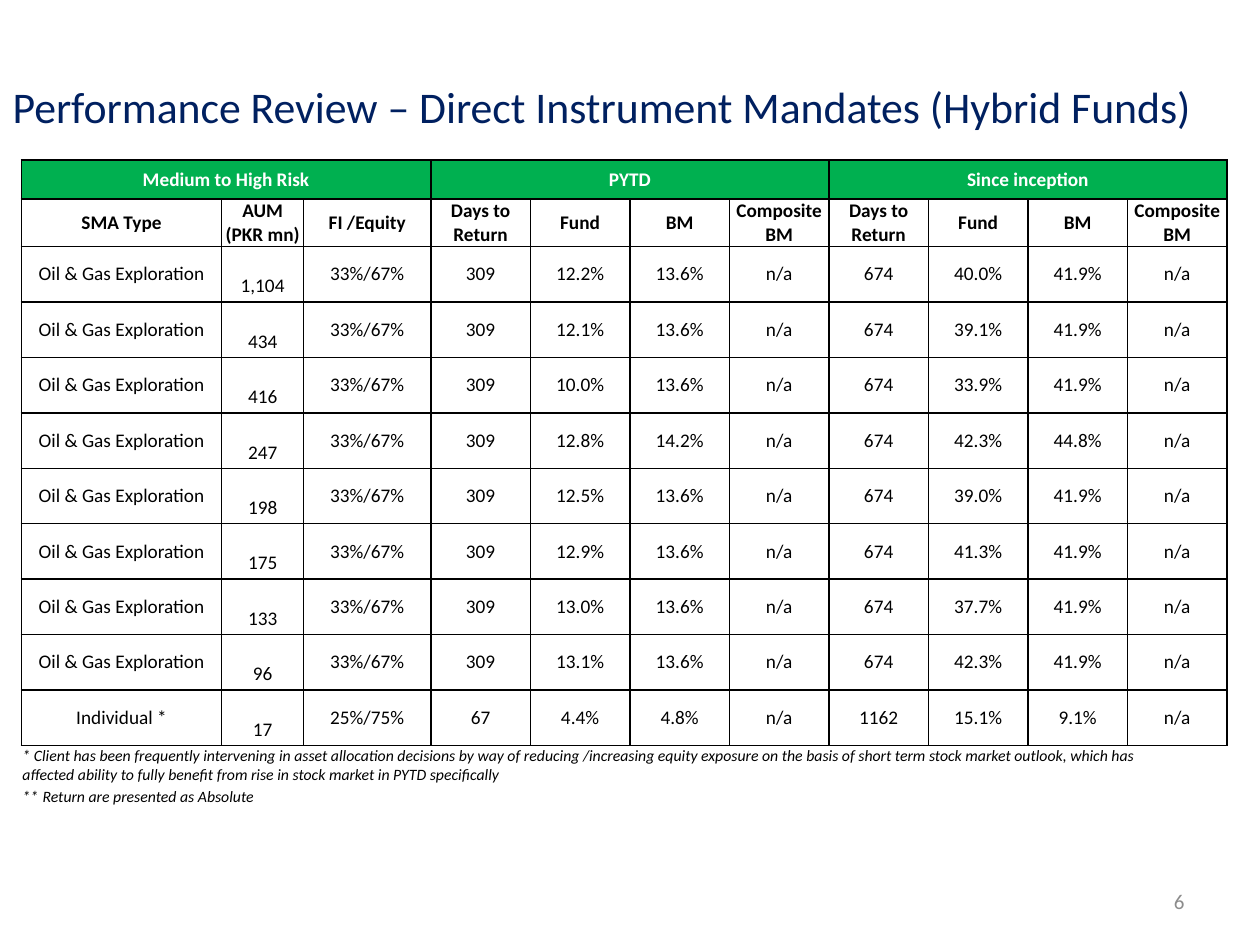
from dataclasses import dataclass

from lxml import etree
from pptx import Presentation
from pptx.dml.color import RGBColor
from pptx.enum.text import MSO_ANCHOR, MSO_AUTO_SIZE, PP_ALIGN
from pptx.oxml.ns import qn
from pptx.util import Inches, Pt

LEFT, CENTER, RIGHT = PP_ALIGN.LEFT, PP_ALIGN.CENTER, PP_ALIGN.RIGHT
TOP, MIDDLE = MSO_ANCHOR.TOP, MSO_ANCHOR.MIDDLE
NO_FIT = MSO_AUTO_SIZE.NONE

COLORS = {
    "navy": "002060",
    "green": "00B050",
    "white": "FFFFFF",
    "black": "000000",
    "gray": "8C8C8C",
}
WIDTHS = [1.59, 0.65, 1.01] + [0.79] * 8
HEIGHTS = [0.31, 0.35] + [0.44] * 9
AUM_COL = 1
AUM_DROP = 0.19


@dataclass
class Band:
    text: str
    start: int
    span: int


@dataclass
class Fund:
    aum: str
    year: tuple[str, str]
    total: tuple[str, str]
    kind: str = "Oil & Gas Exploration"
    mix: str = "33%/67%"
    days: tuple[str, str] = ("309", "674")

    def cells(self) -> list[str]:
        return [self.kind, self.aum, self.mix,
                self.days[0], *self.year, "n/a",
                self.days[1], *self.total, "n/a"]


BANDS = [
    Band("Medium to High Risk", 0, 3),
    Band("PYTD", 3, 4),
    Band("Since inception", 7, 4),
]
HEADS = ["SMA Type", "AUM (PKR mn)", "FI /Equity"]
HEADS += ["Days to Return", "Fund", "BM", "Composite BM"] * 2
FUNDS = [
    Fund("1,104", ("12.2%", "13.6%"), ("40.0%", "41.9%")),
    Fund("434", ("12.1%", "13.6%"), ("39.1%", "41.9%")),
    Fund("416", ("10.0%", "13.6%"), ("33.9%", "41.9%")),
    Fund("247", ("12.8%", "14.2%"), ("42.3%", "44.8%")),
    Fund("198", ("12.5%", "13.6%"), ("39.0%", "41.9%")),
    Fund("175", ("12.9%", "13.6%"), ("41.3%", "41.9%")),
    Fund("133", ("13.0%", "13.6%"), ("37.7%", "41.9%")),
    Fund("96", ("13.1%", "13.6%"), ("42.3%", "41.9%")),
    Fund("17", ("4.4%", "4.8%"), ("15.1%", "9.1%"),
         "Individual *", "25%/75%", ("67", "1162")),
]
NOTES = [
    [("* Client has been frequently intervening in asset allocation decisions "
      "by way of reducing /increasing equity exposure on the basis of short "
      "term stock market outlook, which has affected ability to fully benefit "
      "from rise in stock market in PYTD specifically", 9)],
    [("**", 9), (" ", 11), ("Return are presented as Absolute", 9)],
]


def style(font, size: float, color: str, **extra) -> None:
    values = {"name": "Calibri", "size": Pt(size), **extra}
    for key, value in values.items():
        setattr(font, key, value)
    font.color.rgb = RGBColor.from_string(COLORS[color])


def setup(shape, box: tuple, anchor) -> None:
    for key, value in zip(("left", "top", "width", "height"), box):
        setattr(shape, key, Inches(value))
    frame = shape.text_frame
    values = {"word_wrap": True, "auto_size": NO_FIT, "vertical_anchor": anchor}
    for key, value in values.items():
        setattr(frame, key, value)


def add_line(slide, shape, box: tuple, text: str, size: float, color: str, align) -> None:
    setup(shape, box, MIDDLE)
    para = shape.text_frame.paragraphs[0]
    para.alignment = align
    run = para.add_run()
    run.text = text
    style(run.font, size, color)


def add_notes(slide, box: tuple) -> None:
    shape = slide.shapes.add_textbox(0, 0, 0, 0)
    setup(shape, box, TOP)
    frame = shape.text_frame
    for num, parts in enumerate(NOTES):
        para = frame.add_paragraph() if num else frame.paragraphs[0]
        para.alignment = LEFT
        for text, size in parts:
            run = para.add_run()
            run.text = text
            style(run.font, size, "black", italic=True)


def format_cell(cell, fill: str) -> None:
    props = cell._tc.get_or_add_tcPr()
    for side in ("lnL", "lnR", "lnT", "lnB"):
        line = etree.SubElement(props, qn("a:" + side), w=str(Pt(1)))
        solid = etree.SubElement(line, qn("a:solidFill"))
        etree.SubElement(solid, qn("a:srgbClr"), val=COLORS["black"])
    cell.fill.solid()
    cell.fill.fore_color.rgb = RGBColor.from_string(COLORS[fill])
    for side in ("left", "right", "top", "bottom"):
        setattr(cell, "margin_" + side, 0)
    cell.vertical_anchor = MIDDLE


def write_cell(cell, text: str, color: str, bold: bool) -> None:
    para = cell.text_frame.paragraphs[0]
    para.alignment = CENTER
    run = para.add_run()
    run.text = text
    style(run.font, 11, color, bold=bold)


def add_grid(slide, left: float, top: float) -> None:
    frame = slide.shapes.add_table(
        len(HEIGHTS), len(WIDTHS), Inches(left), Inches(top),
        Inches(sum(WIDTHS)), Inches(sum(HEIGHTS)))
    table = frame.table
    table.horz_banding = False
    for col, width in zip(table.columns, WIDTHS):
        col.width = Inches(width)
    for num, (row, height) in enumerate(zip(table.rows, HEIGHTS)):
        row.height = Inches(height)
        for cell in row.cells:
            format_cell(cell, "white" if num else "green")
    for band in BANDS:
        cell = table.cell(0, band.start)
        cell.merge(table.cell(0, band.start + band.span - 1))
        write_cell(cell, band.text, "white", True)
    lines = [HEADS] + [fund.cells() for fund in FUNDS]
    for num, line in enumerate(lines, 1):
        for col, text in enumerate(line):
            write_cell(table.cell(num, col), text, "black", num == 1)
        if num > 1:
            table.cell(num, AUM_COL).margin_top = Inches(AUM_DROP)


def main() -> None:
    deck = Presentation()
    deck.slide_width, deck.slide_height = Inches(10), Inches(7.5)
    slide = deck.slides.add_slide(deck.slide_layouts[5])
    add_line(slide, slide.shapes.title, (0, 0.54, 10, 0.6),
             "Performance Review – Direct Instrument Mandates (Hybrid Funds)",
             25, "navy", LEFT)
    add_line(slide, slide.shapes.add_textbox(0, 0, 0, 0),
             (7.17, 6.95, 2.33, 0.4), "6", 12, "gray", RIGHT)
    add_notes(slide, (0.08, 5.87, 9.42, 0.96))
    add_grid(slide, 0.17, 1.27)
    deck.save("out.pptx")


if __name__ == "__main__":
    main()
